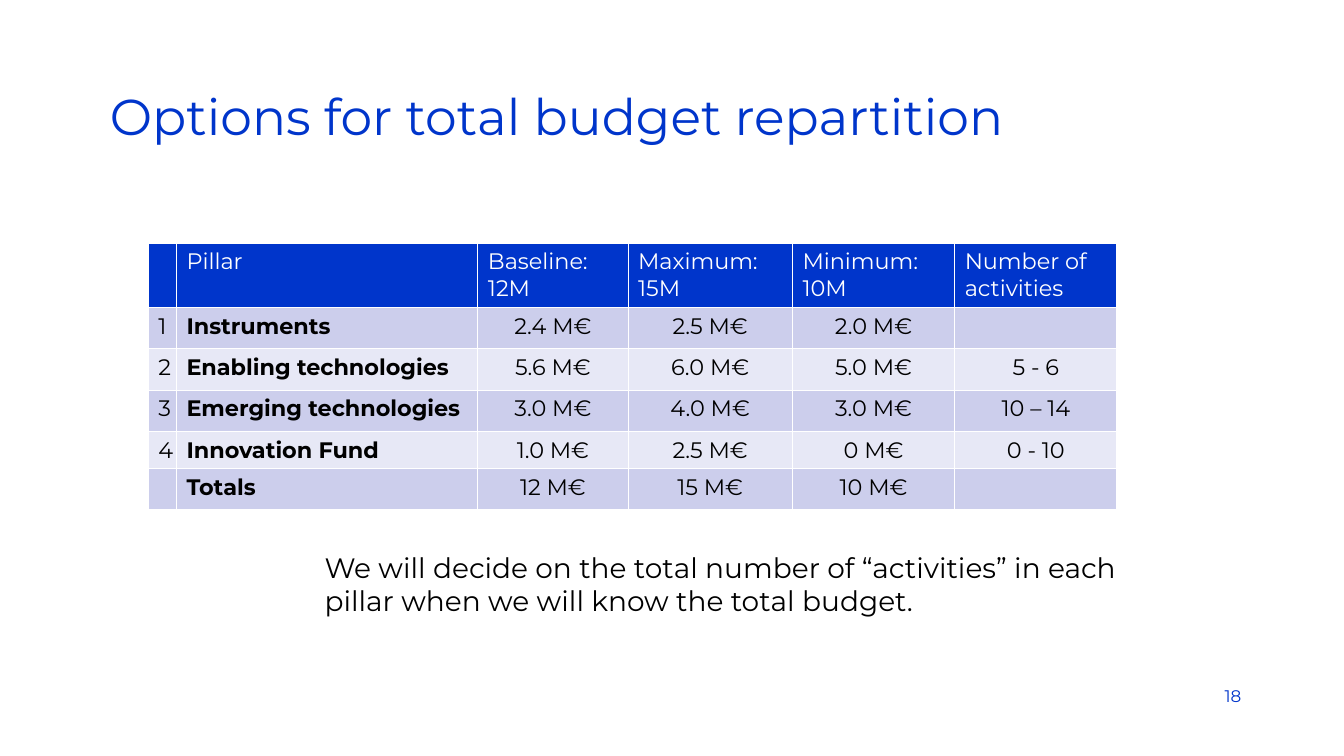
"""Build the slide on options for total budget repartition."""
from lxml import etree
from pptx import Presentation
from pptx.dml.color import RGBColor
from pptx.enum import text
from pptx.oxml import ns
from pptx.util import Inches, Pt

BLUE = RGBColor(0x00, 0x35, 0xCB)
WHITE = RGBColor(0xFF, 0xFF, 0xFF)
BLACK = RGBColor(0x00, 0x00, 0x00)
DARK = RGBColor(0xCC, 0xCE, 0xEC)
LIGHT = RGBColor(0xE7, 0xE8, 0xF6)
LEFT, MID, RIGHT = text.PP_ALIGN.LEFT, text.PP_ALIGN.CENTER, text.PP_ALIGN.RIGHT


def write(frame, words, size, color, align=LEFT, bold=False):
    frame.text = words
    para = frame.paragraphs[0]
    para.alignment = align
    for run in para.runs:
        run.font.name = "Montserrat"
        run.font.size = Pt(size)
        run.font.bold = bold
        run.font.color.rgb = color


def edge(cell):
    props = cell._tc.get_or_add_tcPr()
    for spot, side in enumerate(("lnL", "lnR", "lnT", "lnB")):
        line = etree.Element(ns.qn("a:" + side), w=str(Pt(1)))
        fill = etree.SubElement(line, ns.qn("a:solidFill"))
        etree.SubElement(fill, ns.qn("a:srgbClr"), val=str(WHITE))
        props.insert(spot, line)


deck = Presentation()
deck.slide_width, deck.slide_height = Inches(13.33), Inches(7.5)
slide = deck.slides.add_slide(deck.slide_layouts[5])

title = slide.shapes.title
title.left, title.top = Inches(0.99), Inches(0.68)
title.width, title.height = Inches(10.4), Inches(1.01)
write(title.text_frame, "Options for total budget repartition", 36, BLUE)
title.text_frame.vertical_anchor = text.MSO_ANCHOR.MIDDLE
title.text_frame.paragraphs[0].line_spacing = 0.9

rows = [
    ["", "Pillar", "Baseline: 12M", "Maximum: 15M", "Minimum: 10M", "Number of activities"],
    ["1", "Instruments", "2.4 M€", "2.5 M€", "2.0 M€", ""],
    ["2", "Enabling technologies", "5.6 M€", "6.0 M€", "5.0 M€", "5 - 6"],
    ["3", "Emerging technologies", "3.0 M€", "4.0 M€", "3.0 M€", "10 – 14"],
    ["4", "Innovation Fund", "1.0 M€", "2.5 M€", "0 M€", "0 - 10"],
    ["", "Totals", "12 M€", "15 M€", "10 M€", ""],
]
widths = [0.28, 2.99, 1.49, 1.63, 1.61, 1.61]
heights = [0.63, 0.41, 0.41, 0.41, 0.37, 0.41]
table = slide.shapes.add_table(
    len(rows), len(widths), Inches(1.47), Inches(2.41), Inches(9.6), Inches(2.62)
).table
for col, width in zip(table.columns, widths):
    col.width = Inches(width)
for r, row in enumerate(rows):
    table.rows[r].height = Inches(heights[r])
    for c, words in enumerate(row):
        cell = table.cell(r, c)
        cell.fill.solid()
        if r == 0:
            cell.fill.fore_color.rgb = BLUE
            write(cell.text_frame, words, 16, WHITE)
        else:
            cell.fill.fore_color.rgb = DARK if r % 2 else LIGHT
            write(cell.text_frame, words, 16, BLACK, MID if c > 1 else LEFT, c == 1)
        edge(cell)

note = slide.shapes.add_textbox(Inches(3.12), Inches(5.41), Inches(8.19), Inches(0.77))
note.text_frame.word_wrap = True
write(
    note.text_frame,
    "We will decide on the total number of “activities” in each pillar "
    "when we will know the total budget.",
    20,
    BLACK,
)

page = slide.shapes.add_textbox(Inches(10.6), Inches(6.7), Inches(1.81), Inches(0.4))
page.text_frame.word_wrap = True
page.text_frame.vertical_anchor = text.MSO_ANCHOR.MIDDLE
write(page.text_frame, "18", 12, BLUE, RIGHT)

deck.save("out.pptx")
